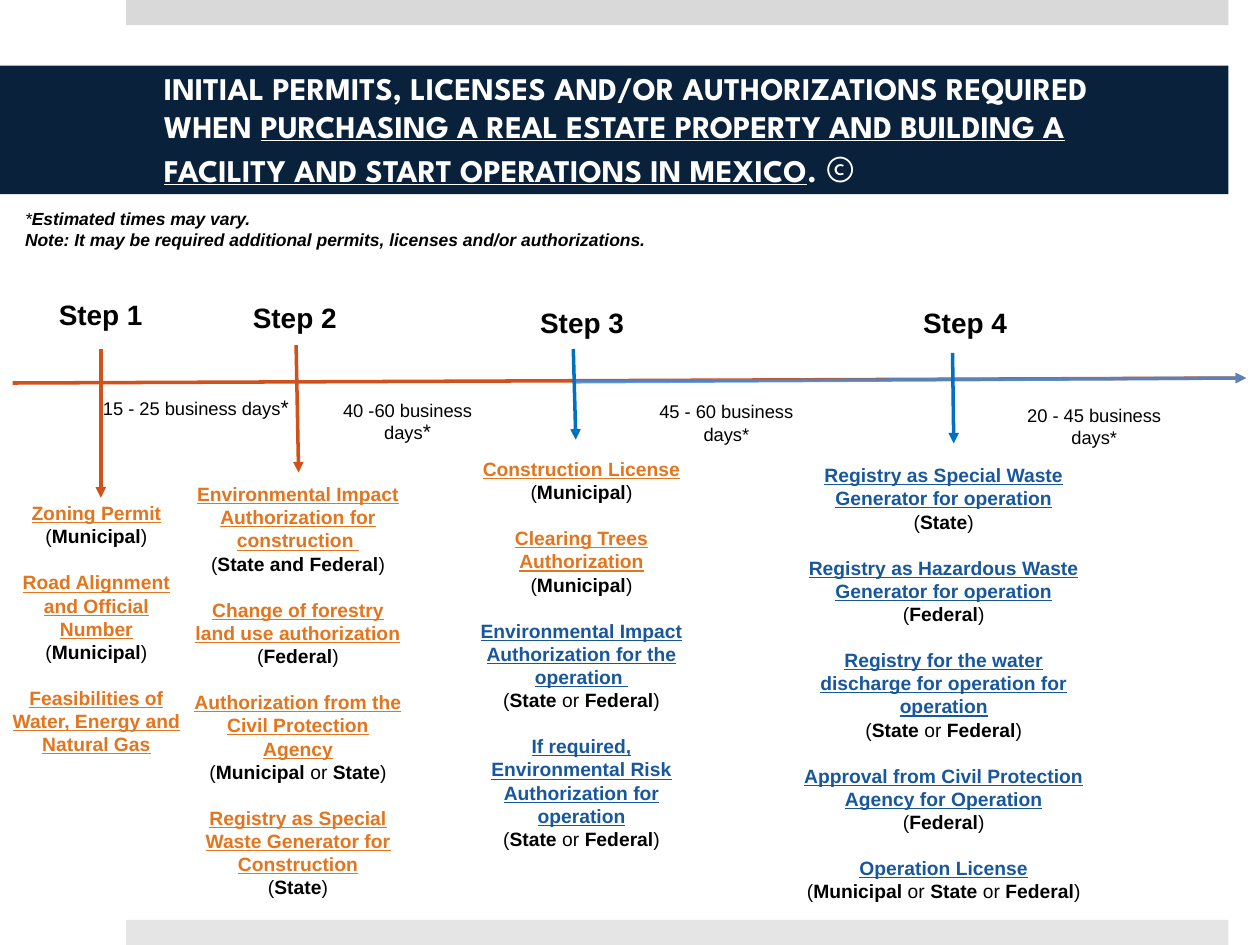
"""Build the timeline slide of permits needed to buy, build and operate in Mexico."""
from dataclasses import dataclass

from lxml import etree
from pptx import Presentation
from pptx.dml.color import RGBColor as RGB
from pptx.enum.shapes import MSO_CONNECTOR as Conn, MSO_SHAPE as Shape
from pptx.enum.text import MSO_ANCHOR as Anchor, PP_ALIGN as Align
from pptx.oxml.ns import qn
from pptx.util import Inches, Pt


@dataclass(frozen=True)
class Theme:
    navy: str = "09213B"
    white: str = "FFFFFF"
    black: str = "000000"
    top_bar: str = "D9D9D9"
    bottom_bar: str = "E5E5E5"
    build: str = "E2751D"
    operate: str = "18579B"
    build_line: str = "D0511A"
    operate_line: str = "0070C0"
    overlay: str = "3F8DE2"
    title_font: str = "League Spartan"
    font: str = "Arial"
    title: float = 18
    copyright: float = 21.6
    step: float = 16
    permit: float = 11
    duration: float = 10.5
    star: float = 12
    note: float = 10


T = Theme()


def add_run(p, text, color=T.black, **formats):
    r = p.add_run()
    r.text = text
    r.font.color.rgb = RGB.from_string(color)
    for name, value in ({"name": T.font} | formats).items():
        setattr(r.font, name, value)


def add_text(box, paragraphs, size, align=Align.CENTER):
    tf = s.shapes.add_textbox(*map(Inches, box)).text_frame
    tf.word_wrap = True
    for i, (gap, runs) in enumerate(paragraphs):
        p = tf.add_paragraph() if i else tf.paragraphs[0]
        p.alignment = align
        p.line_spacing = Pt(1.2 * size)
        p.space_before = Pt(gap)
        for text, formats in runs:
            add_run(p, text, **({"size": Pt(size)} | formats))


prs = Presentation()
prs.slide_width, prs.slide_height = Inches(10), Inches(7.5)
s = prs.slides.add_slide(prs.slide_layouts[5])

for top, color in ((0, T.top_bar), (7.3, T.bottom_bar)):
    bar = s.shapes.add_shape(Shape.RECTANGLE, *map(Inches, (1, top, 8.75, 0.2)))
    bar.shadow.inherit = False
    bar.fill.solid()
    bar.fill.fore_color.rgb = RGB.from_string(color)
    bar.line.fill.background()

title = s.shapes.title
title.left, title.top, title.width, title.height = map(Inches, (0, 0.52, 9.75, 1.02))
title.fill.solid()
title.fill.fore_color.rgb = RGB.from_string(T.navy)
tf = title.text_frame
frame_format = {
    "word_wrap": True, "vertical_anchor": Anchor.MIDDLE,
    "margin_left": Inches(1.3), "margin_right": Inches(0.5),
    "margin_top": Inches(0.05), "margin_bottom": Inches(0.05),
}
for name, value in frame_format.items():
    setattr(tf, name, value)
p = tf.paragraphs[0]
p.alignment = Align.LEFT
for text, size, bold, underline in (
    ("INITIAL PERMITS, LICENSES AND/OR AUTHORIZATIONS REQUIRED WHEN ", T.title, True, False),
    ("PURCHASING A REAL ESTATE PROPERTY AND BUILDING A FACILITY AND START OPERATIONS IN MEXICO",
     T.title, True, True),
    (".", T.title, True, False),
    (" ©", T.copyright, False, False),
):
    add_run(p, text, T.white, name=T.title_font, size=Pt(size), bold=bold, underline=underline)

note = {"bold": True, "italic": True}
add_text((0.1, 1.6, 7.61, 0.44), [
    (0, [("*", {"italic": True}), ("Estimated times may vary.", note)]),
    (0, [("Note: It may be required additional permits, licenses and/or authorizations.", note)]),
], T.note, Align.JUSTIFY)

arrows = [
    (0.1, 3.04, 9.89, 3, T.build_line),
    (4.57, 3.03, 9.89, 3, T.overlay),
    (0.8, 2.77, 0.8, 3.95, T.build_line),
    (2.35, 2.74, 2.37, 3.75, T.build_line),
    (4.55, 2.77, 4.57, 3.49, T.operate_line),
    (7.56, 2.8, 7.57, 3.52, T.operate_line),
]
for *ends, color in arrows:
    arrow = s.shapes.add_connector(Conn.STRAIGHT, *map(Inches, ends))
    arrow.line.width = Pt(2)
    arrow.line.color.rgb = RGB.from_string(color)
    ln = arrow.line._get_or_add_ln()
    etree.SubElement(ln, qn("a:tailEnd"), type="triangle")
    if color == T.overlay:
        etree.SubElement(ln.find(".//" + qn("a:srgbClr")), qn("a:alpha"), val="80000")
    etree.SubElement(arrow._element.spPr, qn("a:effectLst"))

steps = [
    ((0.32, 2.31, 0.91, 0.37), (-0.01, 3.93, 1.55, 2.32), [
        ("Zoning Permit", T.build, ["Municipal"]),
        ("Road Alignment and Official Number", T.build, ["Municipal"]),
        ("Feasibilities of Water, Energy and Natural Gas", T.build, []),
    ]),
    ((1.69, 2.34, 1.08, 0.37), (1.44, 3.78, 1.85, 3.62), [
        ("Environmental Impact Authorization for construction ", T.build, ["State and Federal"]),
        ("Change of forestry land use authorization", T.build, ["Federal"]),
        ("Authorization from the Civil Protection Agency", T.build, ["Municipal", "State"]),
        ("Registry as Special Waste Generator for Construction", T.build, ["State"]),
    ]),
    ((4.17, 2.38, 0.88, 0.37), (3.69, 3.58, 1.85, 3.8), [
        ("Construction License", T.build, ["Municipal"]),
        ("Clearing Trees Authorization", T.build, ["Municipal"]),
        ("Environmental Impact Authorization for the operation ", T.operate, ["State", "Federal"]),
        ("If required, Environmental Risk Authorization for operation", T.operate,
         ["State", "Federal"]),
    ]),
    ((7.01, 2.38, 1.08, 0.37), (6.28, 3.63, 2.42, 3.8), [
        ("Registry as Special Waste Generator for operation", T.operate, ["State"]),
        ("Registry as Hazardous Waste Generator for operation", T.operate, ["Federal"]),
        ("Registry for the water discharge for operation for operation", T.operate,
         ["State", "Federal"]),
        ("Approval from Civil Protection Agency for Operation", T.operate, ["Federal"]),
        ("Operation License", T.operate, ["Municipal", "State", "Federal"]),
    ]),
]
for number, (label_box, permit_box, permits) in enumerate(steps, 1):
    add_text(label_box, [(0, [(f"Step {number}", {"bold": True})])], T.step, Align.RIGHT)
    paragraphs = []
    for permit, color, authorities in permits:
        gap = 1.2 * T.permit if paragraphs else 0
        paragraphs.append((gap, [(permit, {"color": color, "bold": True, "underline": True})]))
        if authorities:
            runs = []
            for authority in authorities:
                runs += [(" or " if runs else "(", {}), (authority, {"bold": True})]
            paragraphs.append((0, runs + [(")", {})]))
    add_text(permit_box, paragraphs, T.permit)

durations = [
    ((0.63, 3.11, 1.85, 0.3), ["15 - 25 business days"], T.star),
    ((2.31, 3.12, 1.85, 0.48), ["40 -60 business", "days"], T.star),
    ((4.84, 3.13, 1.85, 0.47), ["45 - 60 business", "days"], T.duration),
    ((7.95, 3.16, 1.47, 0.45), ["20 - 45 business", "days"], T.duration),
]
for box, lines, star_size in durations:
    paragraphs = [(0, [(line, {})]) for line in lines]
    paragraphs[-1][1].append(("*", {"size": Pt(star_size)}))
    add_text(box, paragraphs, T.duration)

prs.save("out.pptx")
